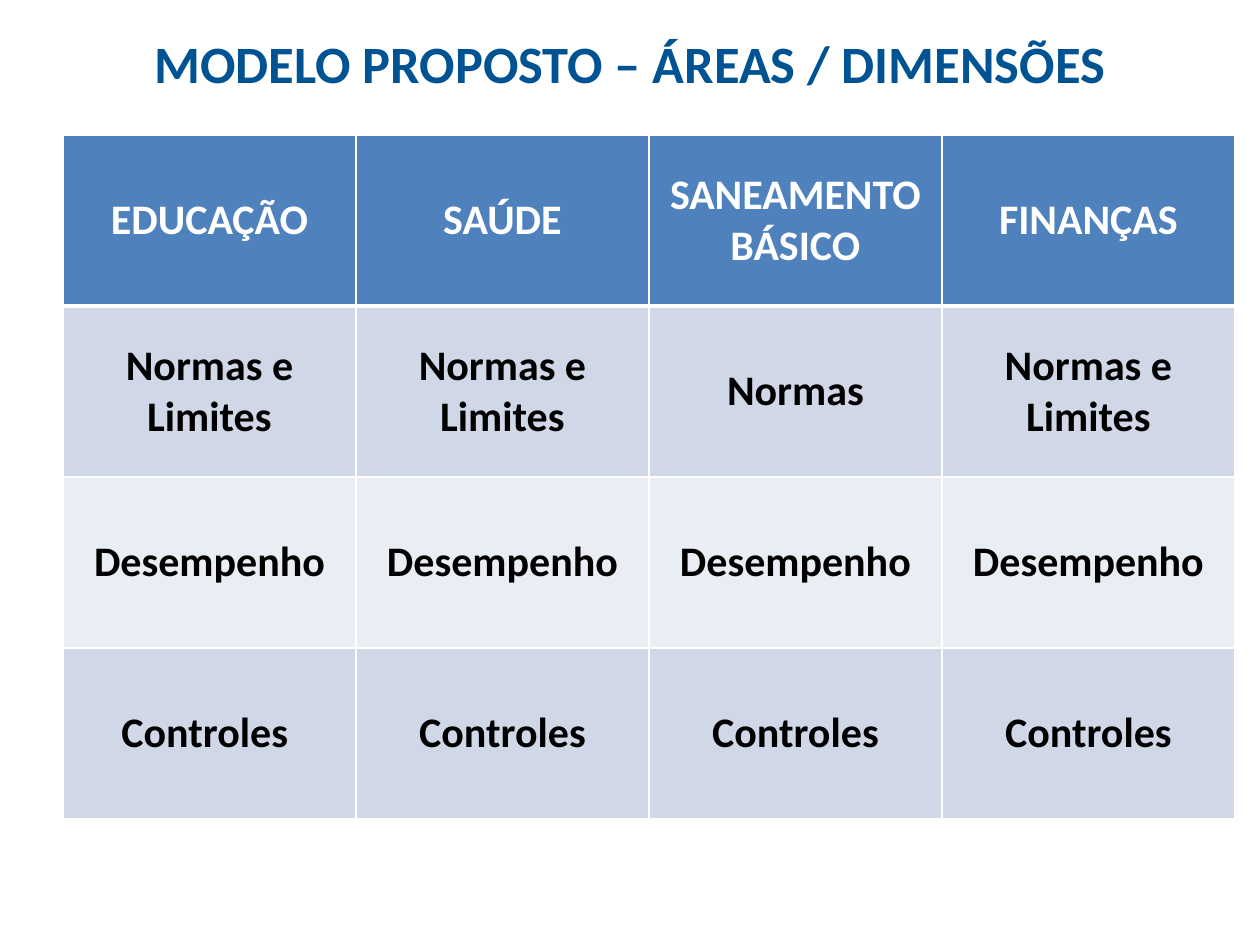
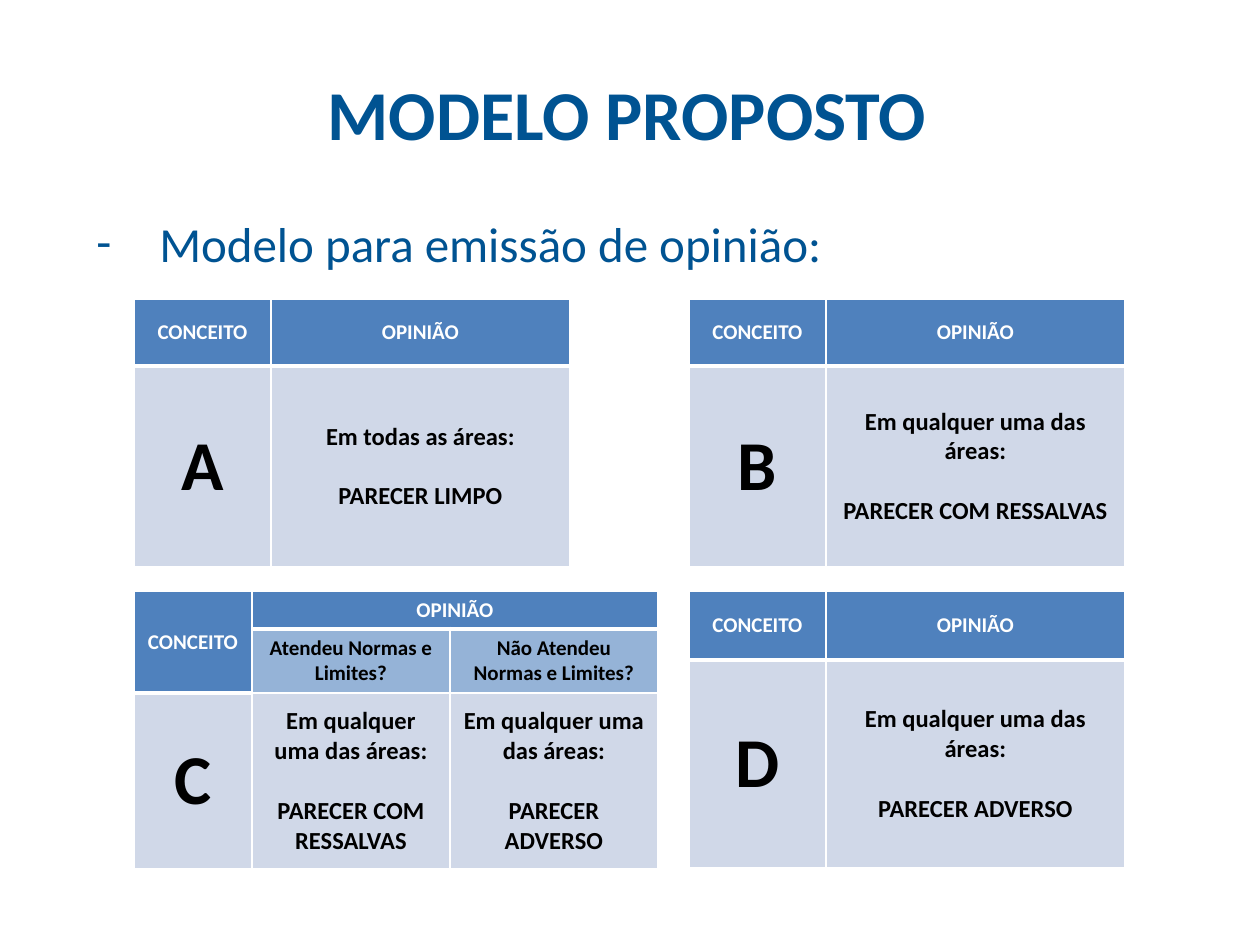
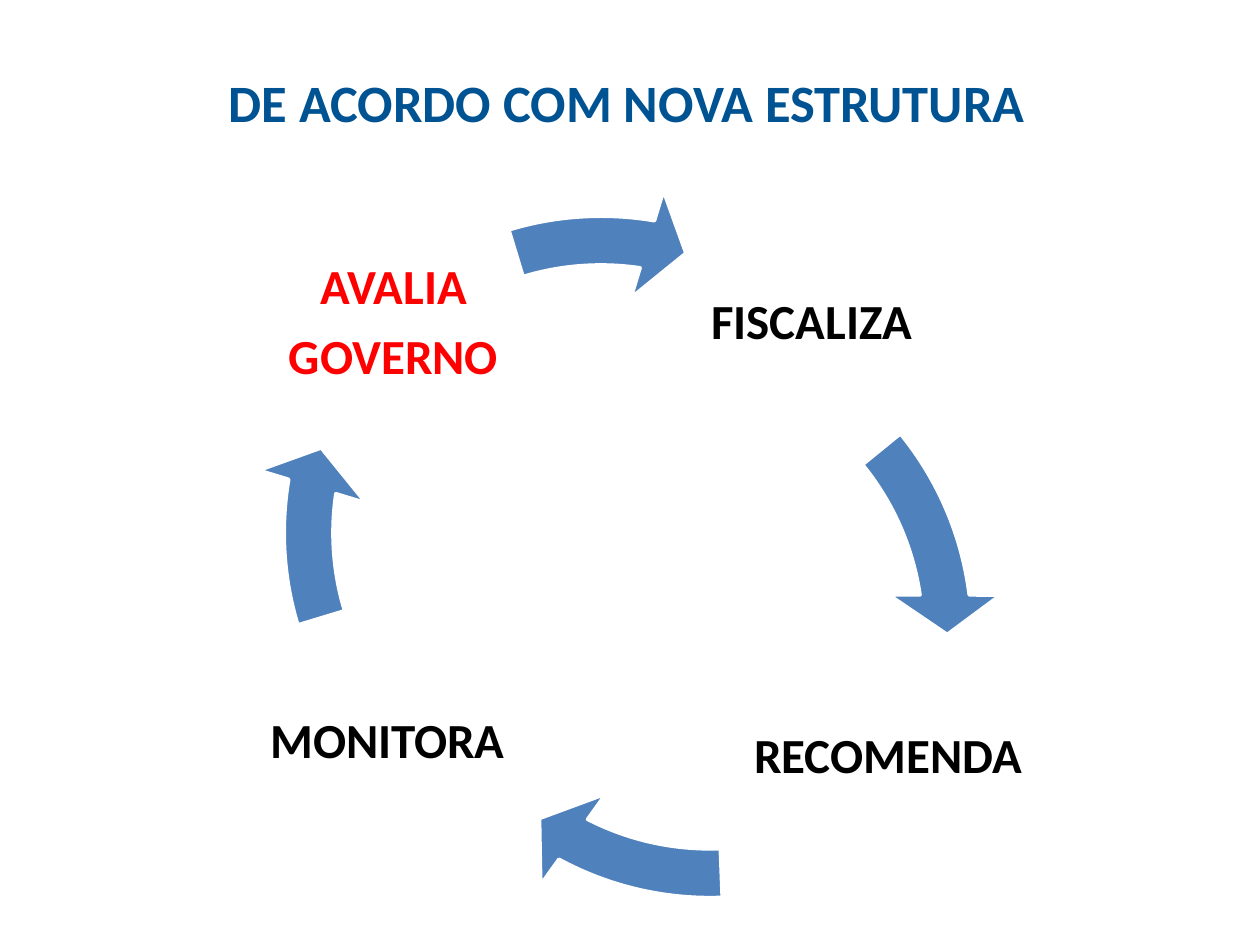
from lxml import etree
from pptx import Presentation, util as u
from pptx.dml.color import RGBColor
from pptx.enum import shapes, text
from pptx.oxml.ns import qn

SCALE = 914400 / 126  # EMU in one px
FONT = "Calibri"
NAVY = RGBColor(0x00, 0x53, 0x92)
BLUE = RGBColor(0x4F, 0x81, 0xBD)
MID = RGBColor(0x95, 0xB3, 0xD7)
PALE = RGBColor(0xD0, 0xD8, 0xE8)
FAINT = RGBColor(0xE9, 0xED, 0xF4)
WHITE = RGBColor(0xFF, 0xFF, 0xFF)
BLACK = RGBColor(0x00, 0x00, 0x00)
RED = RGBColor(0xFF, 0x00, 0x00)
CENTER = text.PP_ALIGN.CENTER
MIDDLE = text.MSO_ANCHOR.MIDDLE


def px(num):
    return u.Emu(round(num * SCALE))


def apply(target, form):
    for name, value in form.items():
        setattr(target, name, value)


class Deck:
    def __init__(self, width, height):
        self.prs = Presentation()
        apply(self.prs, {"slide_width": px(width), "slide_height": px(height)})

    def page(self):
        self.slide = self.prs.slides.add_slide(self.prs.slide_layouts[6])

    def put(self, para, words, size, color, bold=True, **form):
        apply(para, {"alignment": CENTER, **form})
        run = para.add_run()
        run.text = words
        apply(run.font, {"name": FONT, "size": u.Pt(size), "bold": bold})
        run.font.color.rgb = color

    def box(self, left, top, width, height, **form):
        frame = self.slide.shapes.add_textbox(*map(px, (left, top, width, height))).text_frame
        apply(frame, {"word_wrap": True, **form})
        return frame

    def title(self, words, size, left=84, top=64, height=314):
        frame = self.box(left, top, 1086, height)
        self.put(frame.paragraphs[0], words, size, NAVY)
        return frame

    def bullet(self, frame, words, size, gap):
        para = frame.add_paragraph()
        props = para._p.get_or_add_pPr()
        props.set("marL", str(px(63)))
        props.set("indent", str(px(-63)))
        etree.SubElement(props, qn("a:buFont"), typeface=FONT)
        etree.SubElement(props, qn("a:buChar"), char="-")
        self.put(para, words, size, NAVY, bold=False,
                 alignment=text.PP_ALIGN.JUSTIFY, space_before=u.Pt(gap))

    def label(self, left, top, width, lines, color=BLACK):
        margins = {f"margin_{side}": px(5) for side in ("left", "top", "right", "bottom")}
        frame = self.box(left, top, width, 247, vertical_anchor=MIDDLE, **margins)
        for i, words in enumerate(lines):
            para = frame.add_paragraph() if i else frame.paragraphs[0]
            self.put(para, words, 28, color, line_spacing=0.9, space_after=u.Pt(9.8))

    def arrow(self, left, top, start, end):
        """Draw a curved arrow; angles are degrees clockwise from the right."""
        shape = self.slide.shapes.add_shape(
            shapes.MSO_SHAPE.CIRCULAR_ARROW, *map(px, (left, top, 696, 696)))
        shape.shadow.inherit = False
        shape.fill.solid()
        shape.fill.fore_color.rgb = BLUE
        shape.line.color.rgb = WHITE
        shape.line.width = u.Pt(2)
        values = 0.07, 7.76 * 0.6, end * 0.6, start * 0.6, 0.08
        for i, value in enumerate(values):
            shape.adjustments[i] = value

    def edge(self, cell, side, width):
        line = etree.SubElement(cell._tc.get_or_add_tcPr(), qn(f"a:ln{side}"),
                                w=str(u.Pt(width)))
        fill = etree.SubElement(line, qn("a:solidFill"))
        etree.SubElement(fill, qn("a:srgbClr"), val=str(WHITE))

    def table(self, left, top, cols, rows, cells, merges=()):
        """Each cell is (words, size, fill); merges pair the corners of a span."""
        grid = self.slide.shapes.add_table(
            len(rows), len(cols), *map(px, (left, top, sum(cols), sum(rows)))).table
        for col, width in zip(grid.columns, cols):
            col.width = px(width)
        for row, height in zip(grid.rows, rows):
            row.height = px(height)
        for first, last in merges:
            grid.cell(*first).merge(grid.cell(*last))
        for r, line in enumerate(cells):
            for c, (words, size, fill) in enumerate(line):
                cell = grid.cell(r, c)
                cell.vertical_anchor = MIDDLE
                over = r and cells[r - 1][c][2] == BLUE
                for side, thick in zip("LRTB", (False, False, over, fill == BLUE)):
                    self.edge(cell, side, 3 if thick else 1)
                cell.fill.solid()
                cell.fill.fore_color.rgb = fill
                color = WHITE if fill == BLUE else BLACK
                frame = cell.text_frame
                for i, part in enumerate(words.split("\n") if words else ()):
                    para = frame.add_paragraph() if i else frame.paragraphs[0]
                    gap = {"space_before": u.Pt(17)} if i else {}
                    self.put(para, part, size, color, **gap)

    def grade(self, left, top, rows, mark, view):
        self.table(left, top, (137, 299), rows, [
            [("CONCEITO", 12, BLUE), ("OPINIÃO", 12, BLUE)],
            [(mark, 40, PALE), (view, 14, PALE)]])


def areas(deck):
    deck.page()
    deck.title("MODELO PROPOSTO – ÁREAS / DIMENSÕES", 30, left=87, top=25, height=210)
    both = "Normas e Limites"
    lines = [
        (BLUE, ("EDUCAÇÃO", "SAÚDE", "SANEAMENTO BÁSICO", "FINANÇAS")),
        (PALE, (both, both, "Normas", both)),
        (FAINT, ("Desempenho",) * 4),
        (PALE, ("Controles ",) + ("Controles",) * 3)]
    deck.table(63, 135, (293,) * 4, (171,) * 4,
               [[(words, 24, fill) for words in line] for fill, line in lines])


def model(deck):
    deck.page()
    frame = deck.title("MODELO PROPOSTO", 40, height=335)
    deck.bullet(frame, "Modelo para emissão de opinião:", 28, 34)
    left, right, top, low = 134, 689, 299, 591
    some = "Em qualquer uma das áreas:\n"
    partial, adverse = some + "PARECER COM RESSALVAS", some + "PARECER ADVERSO"
    deck.grade(left, top, (67, 201), "A", "Em todas as áreas:\nPARECER LIMPO")
    deck.grade(right, top, (67, 201), "B", partial)
    deck.table(left, low, (118, 198, 208), (38, 64, 176), [
        [("CONCEITO", 12, BLUE), ("OPINIÃO", 12, BLUE), ("", 12, BLUE)],
        [("", 12, BLUE), ("Atendeu Normas e Limites?", 12, MID),
         ("Não Atendeu Normas e Limites?", 12, MID)],
        [("C", 40, PALE), (partial, 14, PALE), (adverse, 14, PALE)],
    ], merges=[((0, 0), (1, 0)), ((0, 1), (0, 2))])
    deck.grade(right, low, (69, 208), "D", adverse)


def cycle(deck):
    deck.page()
    deck.title("DE ACORDO COM NOVA ESTRUTURA", 30)
    deck.label(688, 200, 247, ["FISCALIZA"])
    deck.arrow(307, 286, 320.81, 352.34)
    deck.label(721, 634, 334, ["RECOMENDA"])
    deck.arrow(362, 233, 87.78, 117.88)
    deck.label(248, 619, 290, ["MONITORA "])
    deck.arrow(253, 185, 163.11, 189.13)
    deck.label(270, 200, 247, ["AVALIA", "GOVERNO"], RED)
    deck.arrow(253, 185, 253.11, 279.13)


def main():
    deck = Deck(1260, 945)
    for build in (areas, model, cycle):
        build(deck)
    deck.prs.save("out.pptx")


if __name__ == "__main__":
    main()
